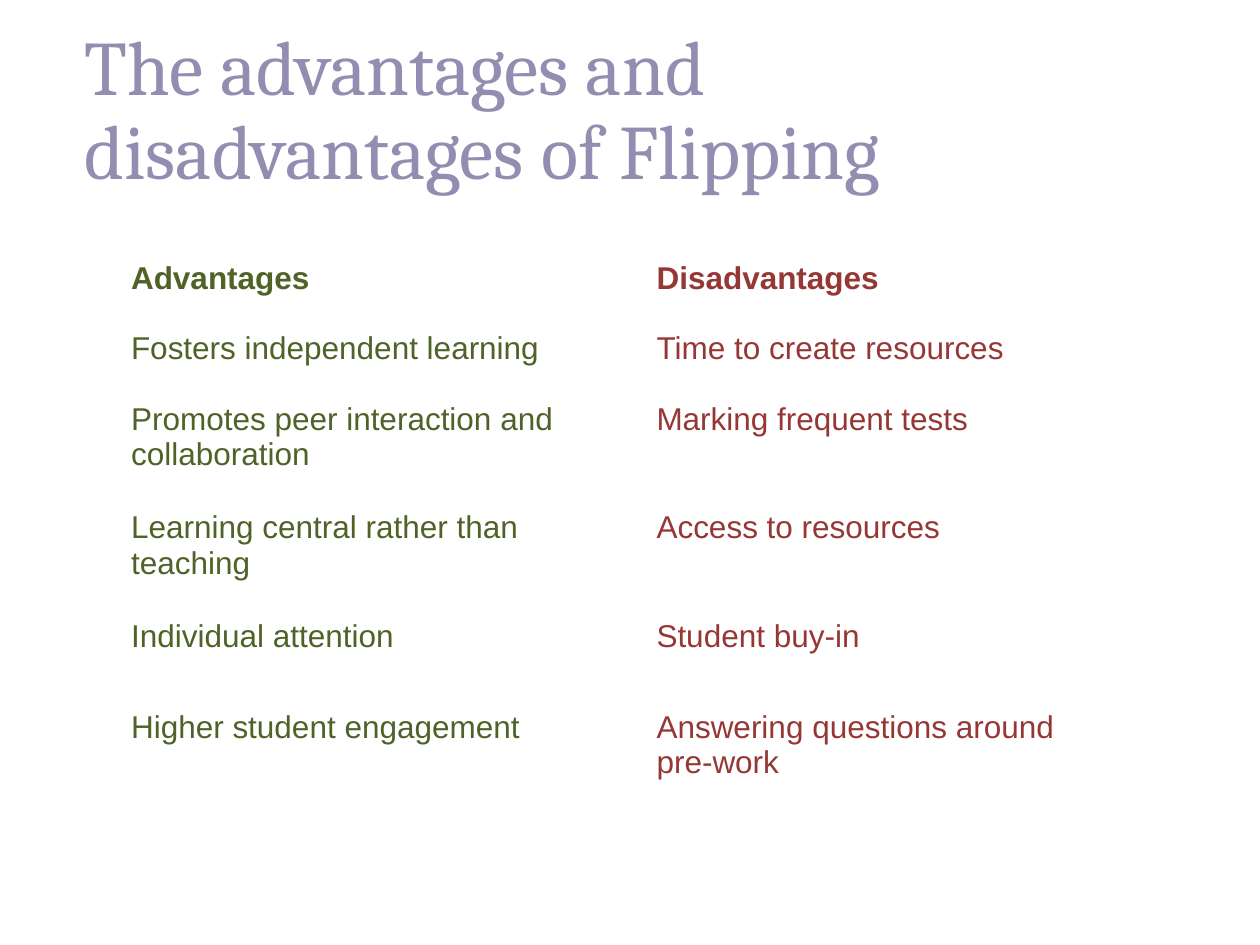
from lxml.etree import SubElement as Sub
from pptx import Presentation
from pptx.dml.color import RGBColor
from pptx.oxml.ns import qn
from pptx.util import Pt

TITLE = "The advantages and disadvantages of Flipping"
ROWS = [
    ("Advantages", "Disadvantages"),
    ("Fosters independent learning", "Time to create resources"),
    ("Promotes peer interaction and collaboration", "Marking frequent tests"),
    ("Learning central rather than teaching", "Access to resources"),
    ("Individual attention", "Student buy-in"),
    ("Higher student engagement", "Answering questions around pre-work"),
]
TALL = [40.3, 40.3, 62, 62, 52, 40.3]
WIDE = [300.3, 272.1]
INKS = ["4F6228", "953735"]


def color(code):
    return RGBColor.from_string(code)


def style(para, face, size, ink, bold=False):
    for run in para.runs:
        font = run.font
        font.name, font.size, font.bold = face, Pt(size), bold
        font.color.rgb = color(ink)


def edge(cell, side, width, ink="FFFFFF"):
    props = cell._tc.get_or_add_tcPr()
    line = Sub(props, qn("a:" + side), w=str(Pt(width)))
    Sub(Sub(line, qn("a:solidFill")), qn("a:srgbClr"), val=ink)


def title(slide, left, top, width, height):
    box = slide.shapes.add_textbox(Pt(left), Pt(top), Pt(width), Pt(height))
    frame = box.text_frame
    frame.word_wrap = True
    frame.margin_left = frame.margin_right = 0
    frame.margin_top = frame.margin_bottom = 0
    frame.text = TITLE
    para = frame.paragraphs[0]
    para.line_spacing = Pt(48)
    style(para, "Cambria", 44, "958CB2")


def grid(slide, left, top, width, height):
    table = slide.shapes.add_table(len(ROWS), len(WIDE), Pt(left), Pt(top),
                                   Pt(width), Pt(height)).table
    table.first_row = table.horz_banding = False
    for col, size in zip(table.columns, WIDE):
        col.width = Pt(size)
    for i, (row, tall, texts) in enumerate(zip(table.rows, TALL, ROWS)):
        row.height = Pt(tall)
        for cell, text, ink in zip(row.cells, texts, INKS):
            cell.text = text
            style(cell.text_frame.paragraphs[0], "Arial", 18, ink, i == 0)
            # Borders, with a heavier rule under the header
            for side in ("lnL", "lnR", "lnT", "lnB"):
                heavy = (i, side) in ((0, "lnB"), (1, "lnT"))
                edge(cell, side, 3 if heavy else 1)
            cell.fill.background()


def main():
    deck = Presentation()
    deck.slide_width, deck.slide_height = Pt(720), Pt(540)
    slide = deck.slides.add_slide(deck.slide_layouts[6])
    title(slide, 48.2, 15.1, 513.4, 107.3)
    grid(slide, 67.7, 145.4, sum(WIDE), sum(TALL))
    deck.save("out.pptx")


if __name__ == "__main__":
    main()
